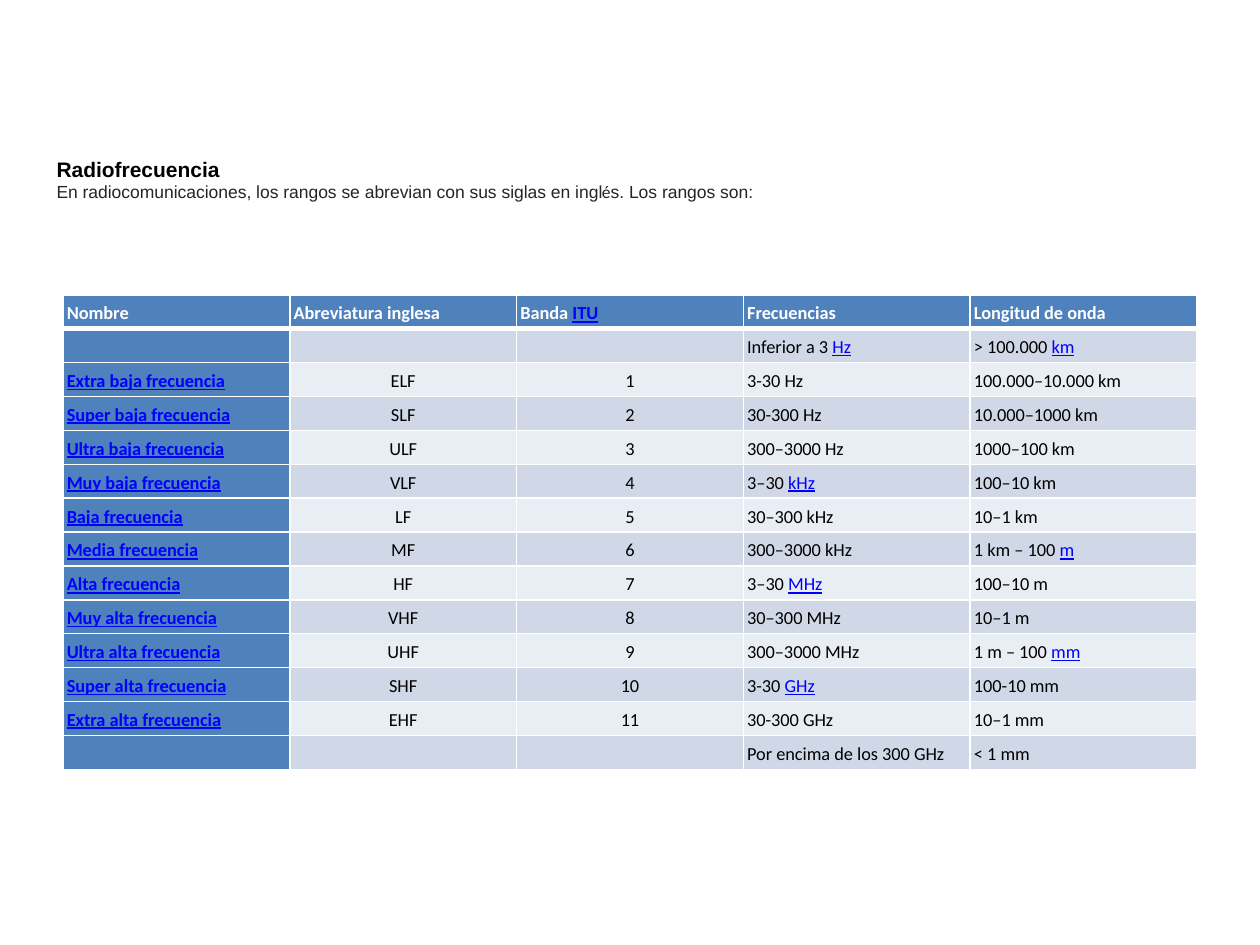
from lxml.etree import SubElement
from pptx import Presentation
from pptx.dml.color import RGBColor
from pptx.enum.text import MSO_ANCHOR, PP_ALIGN
from pptx.oxml import parse_xml
from pptx.oxml.ns import nsdecls, qn
from pptx.util import Inches, Pt

BLACK = RGBColor(0x00, 0x00, 0x00)
WHITE = RGBColor(0xFF, 0xFF, 0xFF)
CHARCOAL = RGBColor(0x25, 0x25, 0x25)
LINK_BLUE = RGBColor(0x00, 0x00, 0xFF)
HEADER_BLUE = RGBColor(0x4F, 0x81, 0xBD)
BAND_DARK = RGBColor(0xD0, 0xD8, 0xE8)
BAND_LIGHT = RGBColor(0xE9, 0xED, 0xF4)

CELL_SIZE = 10.5
CELL_MARGIN = Inches(0.03)

HEADINGS = ["Nombre", "Abreviatura inglesa", "Banda |ITU", "Frecuencias", "Longitud de onda"]
BANDS = [
    ("", "", "", "Inferior a 3 |Hz", "> 100.000 |km"),
    ("|Extra baja frecuencia", "ELF", "1", "3-30 Hz", "100.000–10.000 km"),
    ("|Super baja frecuencia", "SLF", "2", "30-300 Hz", "10.000–1000 km"),
    ("|Ultra baja frecuencia", "ULF", "3", "300–3000 Hz", "1000–100 km"),
    ("|Muy baja frecuencia", "VLF", "4", "3–30 |kHz", "100–10 km"),
    ("|Baja frecuencia", "LF", "5", "30–300 kHz", "10–1 km"),
    ("|Media frecuencia", "MF", "6", "300–3000 kHz", "1 km – 100 |m"),
    ("|Alta frecuencia", "HF", "7", "3–30 |MHz", "100–10 m"),
    ("|Muy alta frecuencia", "VHF", "8", "30–300 MHz", "10–1 m"),
    ("|Ultra alta frecuencia", "UHF", "9", "300–3000 MHz", "1 m – 100 |mm"),
    ("|Super alta frecuencia", "SHF", "10", "3-30 |GHz", "100-10 mm"),
    ("|Extra alta frecuencia", "EHF", "11", "30-300 GHz", "10–1 mm"),
    ("", "", "", "Por encima de los 300 GHz", "< 1 mm"),
]


def add_run(paragraph, text, font_name, size, color, bold=False, underline=False):
    """Append one formatted run to a paragraph."""
    run = paragraph.add_run()
    run.text = text
    font = run.font
    font.name, font.size = font_name, Pt(size)
    font.bold, font.underline = bold, underline
    font.color.rgb = color


def set_borders(cell, top, bottom):
    """Draw white borders whose top and bottom widths are given in points."""
    properties = cell._tc.get_or_add_tcPr()
    widths = {"lnL": 1, "lnR": 1, "lnT": top, "lnB": bottom}
    for position, (side, width) in enumerate(widths.items()):
        properties.insert(position, parse_xml(
            f'<a:{side} {nsdecls("a")} w="{Pt(width)}"><a:solidFill>'
            f'<a:srgbClr val="{WHITE}"/></a:solidFill></a:{side}>'))


def fill_cell(cell, label, color, background, bold, centered):
    """Write a label, underlining what follows the bar, on a filled cell."""
    cell.fill.solid()
    cell.fill.fore_color.rgb = background
    cell.vertical_anchor = MSO_ANCHOR.MIDDLE
    cell.margin_left = cell.margin_right = CELL_MARGIN
    cell.margin_top = cell.margin_bottom = CELL_MARGIN
    paragraph = cell.text_frame.paragraphs[0]
    paragraph.line_spacing = 1.15
    paragraph.alignment = PP_ALIGN.CENTER if centered else PP_ALIGN.LEFT
    plain, _, linked = label.partition("|")
    if plain:
        add_run(paragraph, plain, "Calibri", CELL_SIZE, color, bold)
    if linked:
        add_run(paragraph, linked, "Calibri", CELL_SIZE, LINK_BLUE, bold, True)
    if not label:
        SubElement(paragraph._p, qn("a:endParaRPr")).set("sz", str(int(CELL_SIZE * 100)))


def add_band_table(slide, left, top, width, height):
    """Place the table of radio bands in the given box."""
    rows = [HEADINGS, *BANDS]
    table = slide.shapes.add_table(len(rows), len(HEADINGS), left, top, width, height).table
    for row_index, labels in enumerate(rows):
        is_header = row_index == 0
        for column_index, label in enumerate(labels):
            is_name = column_index == 0
            band = BAND_DARK if row_index % 2 else BAND_LIGHT
            cell = table.cell(row_index, column_index)
            fill_cell(cell, label,
                      color=WHITE if is_header else BLACK,
                      background=HEADER_BLUE if is_header or is_name else band,
                      bold=is_header or is_name,
                      centered=not is_header and column_index in (1, 2))
            set_borders(cell, top=3 if row_index == 1 else 1, bottom=3 if is_header else 1)


def add_introduction(slide, left, top, width, height):
    """Place the heading and its introductory sentence in the given box."""
    frame = slide.shapes.add_textbox(left, top, width, height).text_frame
    frame.word_wrap = True
    frame.margin_top = frame.margin_bottom = 0
    add_run(frame.paragraphs[0], "Radiofrecuencia", "Arial", 12, BLACK, bold=True)
    sentence = frame.add_paragraph()
    for text, font_name in (
        ("En radiocomunicaciones, los rangos se abrevian con sus siglas en ingl", "Arial"),
        ("é", "Calibri"),
        ("s. Los rangos son:", "Arial"),
    ):
        add_run(sentence, text, font_name, 10, CHARCOAL)


def main():
    """Build and save the radio frequency slide."""
    presentation = Presentation()
    presentation.slide_width, presentation.slide_height = Inches(10), Inches(7.5)
    slide = presentation.slides.add_slide(presentation.slide_layouts[6])
    add_band_table(slide, Inches(0.5), Inches(2.34), Inches(9), Inches(3.77))
    add_introduction(slide, Inches(0.35), Inches(1.24), Inches(9.65), Inches(0.57))
    presentation.save("out.pptx")


if __name__ == "__main__":
    main()
